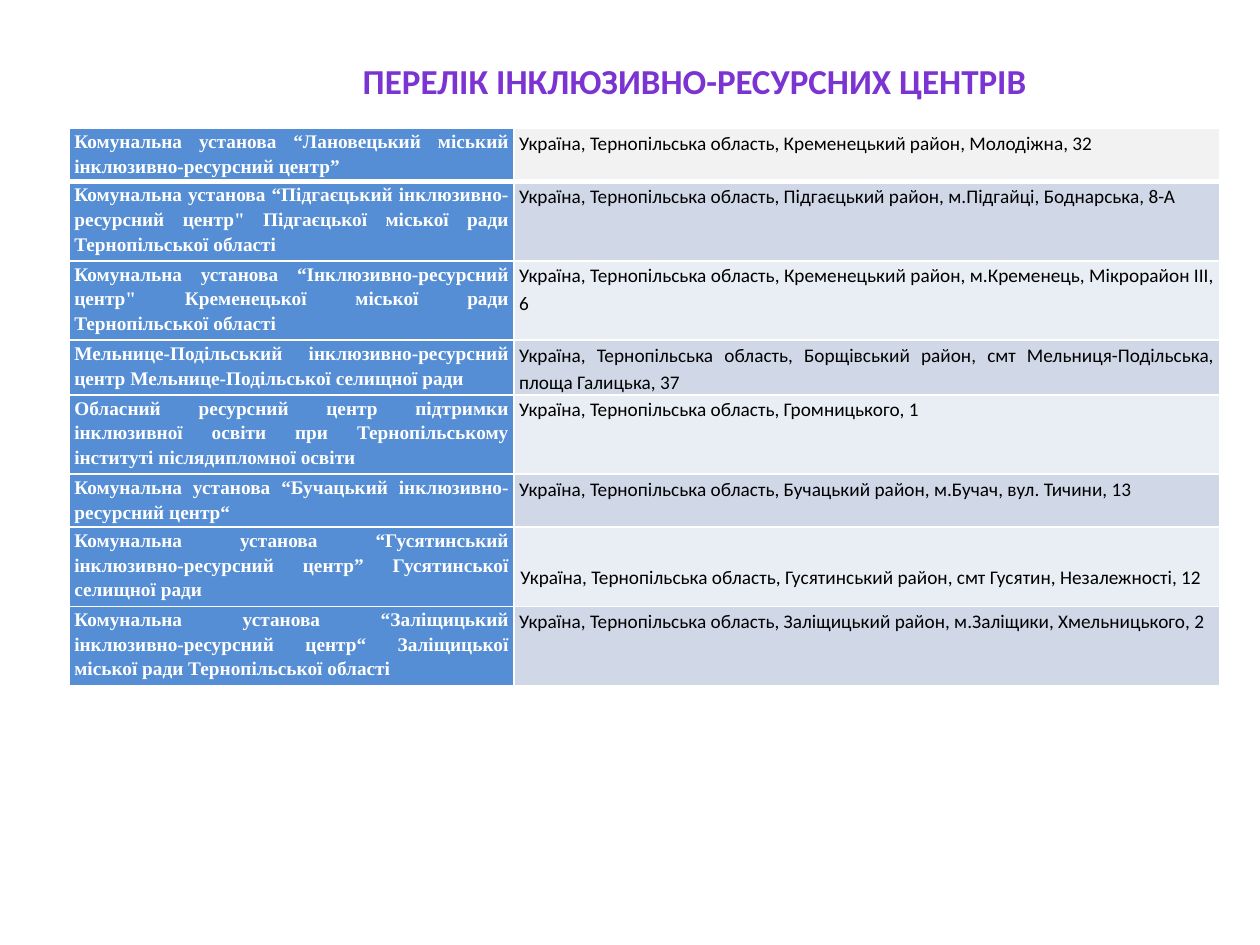
"""Build a slide that lists inclusive resource centres and their addresses."""
from typing import NamedTuple

from lxml import etree
from pptx import Presentation
from pptx.dml.color import RGBColor
from pptx.enum.text import MSO_ANCHOR, MSO_AUTO_SIZE, PP_ALIGN
from pptx.oxml.ns import qn
from pptx.util import Inches, Pt

TOP, BOTTOM = MSO_ANCHOR.TOP, MSO_ANCHOR.BOTTOM
CENTER, JUSTIFY = PP_ALIGN.CENTER, PP_ALIGN.JUSTIFY
NO_AUTOFIT = MSO_AUTO_SIZE.NONE

PURPLE = RGBColor(0x7B, 0x34, 0xD2)
WHITE = RGBColor(0xFF, 0xFF, 0xFF)
BLACK = RGBColor(0x00, 0x00, 0x00)
BLUE = RGBColor(0x55, 0x8E, 0xD5)
GREY = RGBColor(0xF2, 0xF2, 0xF2)
BANDS = (RGBColor(0xE9, 0xED, 0xF4), RGBColor(0xD0, 0xD8, 0xE8))

LINE_HEIGHT = 0.21
COLUMN_WIDTHS = (3.53, 5.6)
CELL_MARGINS = {
    "margin_left": Inches(0.04), "margin_right": Inches(0.04),
    "margin_top": 0, "margin_bottom": 0, "vertical_anchor": TOP,
}
LOW_MARGINS = {
    "margin_left": Inches(0.05), "margin_right": Inches(0.05),
    "margin_bottom": Inches(0.13), "vertical_anchor": BOTTOM,
}
TITLE_FONT = {"name": "Calibri", "size": Pt(20), "bold": True}
NAME_FONT = {"name": "Times New Roman", "size": Pt(11), "bold": True}
ADDRESS_FONT = {"name": "Calibri", "size": Pt(11), "bold": False}


class Centre(NamedTuple):
    name: str
    address: str
    lines: int
    low_address: bool = False


CENTRES = (
    Centre("Комунальна установа “Лановецький міський інклюзивно-ресурсний центр”",
           "Україна, Тернопільська область, Кременецький район, Молодіжна, 32", 2),
    Centre('Комунальна установа “Підгаєцький інклюзивно-ресурсний центр" '
           "Підгаєцької міської ради Тернопільської області",
           "Україна, Тернопільська область, Підгаєцький район, м.Підгайці, Боднарська, 8-А", 3),
    Centre('Комунальна установа “Інклюзивно-ресурсний центр" '
           "Кременецької міської ради Тернопільської області",
           "Україна, Тернопільська область, Кременецький район, м.Кременець, "
           "Мікрорайон ІІІ, 6", 3),
    Centre("Мельнице-Подільський інклюзивно-ресурсний центр "
           "Мельнице-Подільської селищної ради",
           "Україна, Тернопільська область, Борщівський район, "
           "смт Мельниця-Подільська, площа Галицька, 37", 2),
    Centre("Обласний ресурсний центр підтримки інклюзивної освіти "
           "при Тернопільському інституті післядипломної освіти",
           "Україна, Тернопільська область, Громницького, 1", 3),
    Centre("Комунальна установа “Бучацький інклюзивно-ресурсний центр“",
           "Україна, Тернопільська область, Бучацький район, м.Бучач, вул. Тичини, 13", 2),
    Centre("Комунальна установа “Гусятинський інклюзивно-ресурсний центр” "
           "Гусятинської селищної ради",
           "Україна, Тернопільська область, Гусятинський район, смт Гусятин, "
           "Незалежності, 12", 3, True),
    Centre("Комунальна установа “Заліщицький інклюзивно-ресурсний центр“ "
           "Заліщицької міської ради Тернопільської області",
           "Україна, Тернопільська область, Заліщицький район, м.Заліщики, "
           "Хмельницького, 2", 3),
)


def apply(target, values: dict) -> None:
    for attribute, value in values.items():
        setattr(target, attribute, value)


def write(frame, text: str, font: dict, colour: RGBColor, alignment) -> None:
    paragraph = frame.paragraphs[0]
    paragraph.alignment = alignment
    run = paragraph.add_run()
    run.text = text
    apply(run.font, font)
    run.font.color.rgb = colour


def add_borders(cell, widths: dict) -> None:
    properties = cell._tc.get_or_add_tcPr()
    for position, (side, width) in enumerate(widths.items()):
        line = etree.Element(qn(f"a:ln{side}"), w=str(Pt(width)))
        fill = etree.SubElement(line, qn("a:solidFill"))
        etree.SubElement(fill, qn("a:srgbClr"), val=str(WHITE))
        properties.insert(position, line)


def fill_cell(cell, text: str, font: dict, colour: RGBColor, background: RGBColor,
              row: int) -> None:
    apply(cell, CELL_MARGINS)
    write(cell.text_frame, text, font, colour, JUSTIFY)
    cell.text_frame.paragraphs[0].line_spacing = 1.15
    cell.fill.solid()
    cell.fill.fore_color.rgb = background
    add_borders(cell, {"L": 1, "R": 1, "T": 3 if row == 1 else 1, "B": 3 if row == 0 else 1})


def add_title(slide, text: str) -> None:
    title = slide.shapes.title
    apply(title, {"left": Inches(1.46), "top": Inches(0.42),
                  "width": Inches(8.11), "height": Inches(0.77)})
    apply(title.text_frame, {"word_wrap": True, "auto_size": NO_AUTOFIT,
                             "vertical_anchor": TOP})
    write(title.text_frame, text, TITLE_FONT, PURPLE, CENTER)


def add_centres(slide, centres: tuple[Centre, ...]) -> None:
    heights = [LINE_HEIGHT * centre.lines for centre in centres]
    table = slide.shapes.add_table(
        len(centres), len(COLUMN_WIDTHS), Inches(0.55), Inches(1.02),
        Inches(sum(COLUMN_WIDTHS)), Inches(sum(heights))).table
    for column, width in zip(table.columns, COLUMN_WIDTHS):
        column.width = Inches(width)
    for row, (centre, height) in enumerate(zip(centres, heights)):
        table.rows[row].height = Inches(height)
        name, address = table.cell(row, 0), table.cell(row, 1)
        band = BANDS[row % 2] if row else GREY
        fill_cell(name, centre.name, NAME_FONT, WHITE, BLUE, row)
        fill_cell(address, centre.address, ADDRESS_FONT, BLACK, band, row)
        if centre.low_address:
            apply(address, LOW_MARGINS)
            address.text_frame.paragraphs[0].line_spacing = 1.0


def main() -> None:
    presentation = Presentation()
    presentation.slide_width, presentation.slide_height = Inches(10), Inches(7.5)
    slide = presentation.slides.add_slide(presentation.slide_layouts[5])
    add_title(slide, "ПЕРЕЛІК ІНКЛЮЗИВНО-РЕСУРСНИХ ЦЕНТРІВ")
    add_centres(slide, CENTRES)
    presentation.save("out.pptx")


if __name__ == "__main__":
    main()
